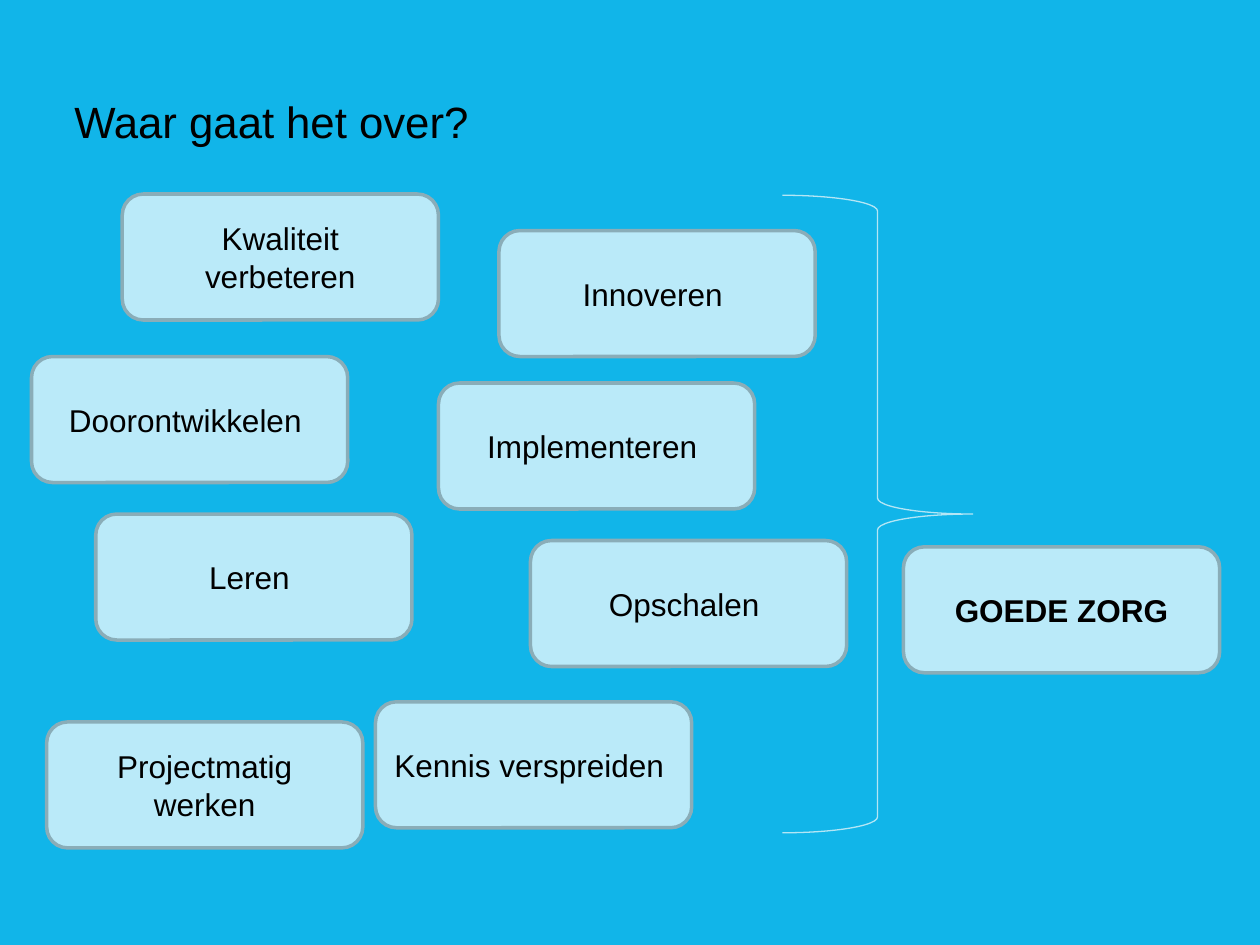
from pptx import Presentation
from pptx.dml.color import RGBColor
from pptx.enum.shapes import MSO_SHAPE
from pptx.enum.text import MSO_ANCHOR, PP_ALIGN
from pptx.util import Inches, Pt

ROUND, BRACE = MSO_SHAPE.ROUNDED_RECTANGLE, MSO_SHAPE.RIGHT_BRACE
MIDDLE, BOTTOM = MSO_ANCHOR.MIDDLE, MSO_ANCHOR.BOTTOM
CENTER = PP_ALIGN.CENTER

TITLE = "Waar gaat het over?"
WIDTH, HEIGHT = 2.51, 1
CARDS = [
    (0.76, 4.08, ["Leren "], False),
    (2.98, 5.57, ["Kennis verspreiden "], False),
    (3.48, 3.04, ["Implementeren "], False),
    (0.37, 5.73, ["Projectmatig werken"], False),
    (4.21, 4.29, ["Opschalen "], False),
    (3.96, 1.83, ["Innoveren "], False),
    (0.97, 1.54, ["Kwaliteit", "verbeteren"], False),
    (0.25, 2.83, ["Doorontwikkelen "], False),
    (7.17, 4.34, ["GOEDE ZORG"], True),
]


def color(value):
    return RGBColor.from_string(value)


def write(para, text, size, bold=False):
    run = para.add_run()
    run.text = text
    font = run.font
    font.name, font.size, font.bold = "Arial", Pt(size), bold
    font.color.rgb = color("000000")


def draw(slide, kind, box, line, weight):
    shape = slide.shapes.add_shape(kind, *map(Inches, box))
    shape.shadow.inherit = False
    shape.line.color.rgb = color(line)
    shape.line.width = Pt(weight)
    return shape


def add_title(slide):
    box = slide.shapes.add_textbox(*map(Inches, (0.51, 0.34, 6.57, 0.83)))
    frame = box.text_frame
    frame.word_wrap = True
    frame.vertical_anchor = BOTTOM
    frame.margin_left = Inches(0.08)
    frame.margin_top = frame.margin_right = frame.margin_bottom = 0
    para = frame.paragraphs[0]
    para.line_spacing = Pt(25)
    write(para, TITLE, 25)


def add_card(slide, left, top, lines, bold):
    card = draw(slide, ROUND, (left, top, WIDTH, HEIGHT), "8AADB8", 2)
    card.fill.solid()
    card.fill.fore_color.rgb = color("BAEAF9")
    frame = card.text_frame
    frame.word_wrap = True
    frame.vertical_anchor = MIDDLE
    for index, text in enumerate(lines):
        para = frame.add_paragraph() if index else frame.paragraphs[0]
        para.alignment = CENTER
        write(para, text, 18, bold)


def main():
    deck = Presentation()
    deck.slide_width, deck.slide_height = Inches(10), Inches(7.5)
    slide = deck.slides.add_slide(deck.slide_layouts[6])
    slide.background.fill.solid()
    slide.background.fill.fore_color.rgb = color("11B5E9")
    add_title(slide)
    for card in CARDS:
        add_card(slide, *card)
    brace = draw(slide, BRACE, (6.21, 1.55, 1.51, 5.06), "B4E6F5", 0.75)
    brace.fill.background()
    deck.save("out.pptx")


if __name__ == "__main__":
    main()
